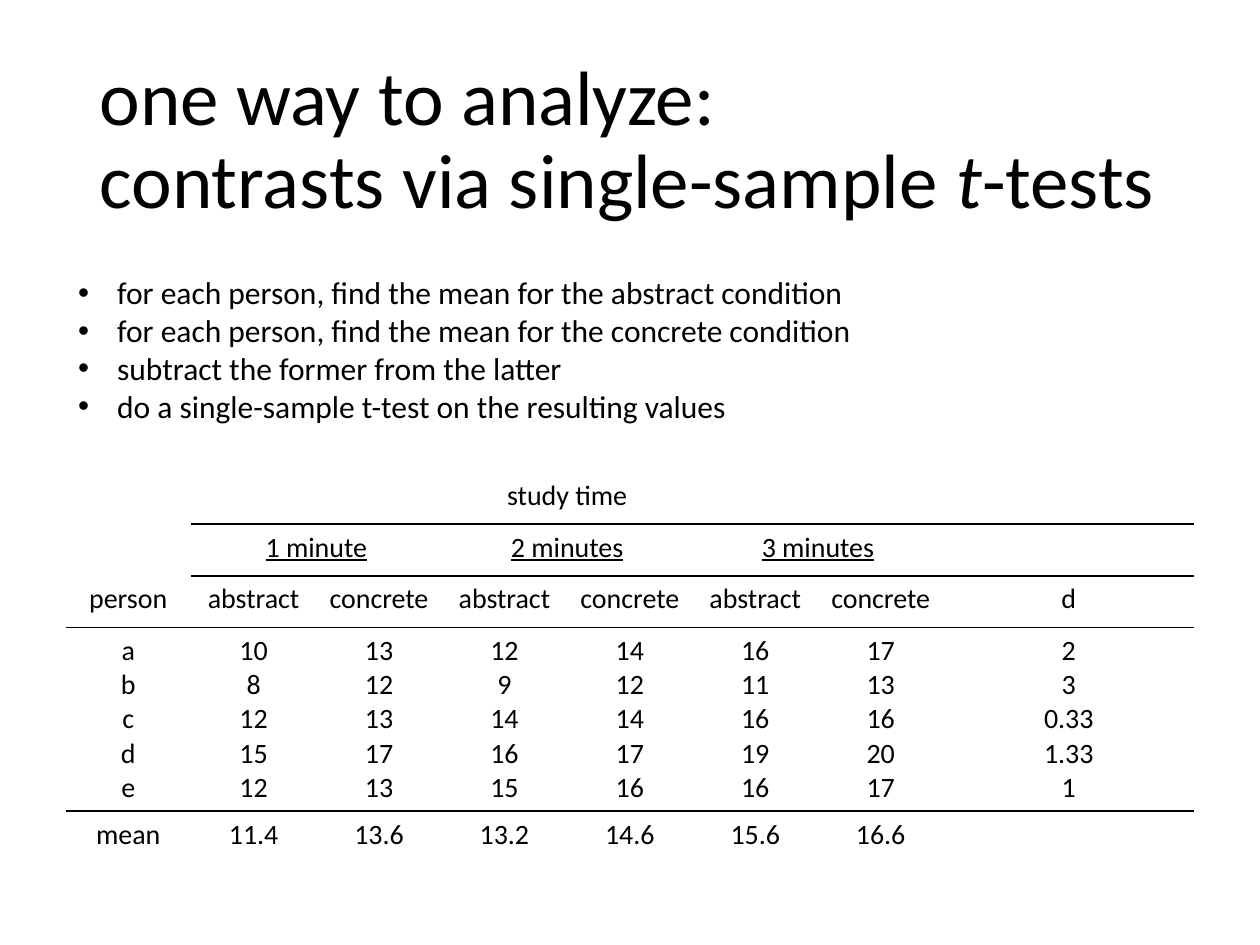
import pptx
import pptx.dml.color
import pptx.enum.text
import pptx.util
from pptx.oxml import parse_xml
from pptx.oxml.ns import nsdecls
from pptx.util import Inches

BLACK = pptx.dml.color.RGBColor(0x00, 0x00, 0x00)
FONT = "Calibri"
NO_STYLE_NO_GRID = "{2D5ABB26-0587-4C30-8999-92F81FD0307C}"
ALIGN = pptx.enum.text.PP_ALIGN

STEPS = [
    "for each person, find the mean for the abstract condition",
    "for each person, find the mean for the concrete condition",
    "subtract the former from the latter",
    "do a single-sample t-test on the resulting values",
]
STUDY_TIMES = ["1 minute", "2 minutes", "3 minutes"]
HEADINGS = ["person"] + ["abstract", "concrete"] * len(STUDY_TIMES) + ["d"]
SCORES = [
    ["a", "10", "13", "12", "14", "16", "17", "2"],
    ["b", "8", "12", "9", "12", "11", "13", "3"],
    ["c", "12", "13", "14", "14", "16", "16", "0.33"],
    ["d", "15", "17", "16", "17", "19", "20", "1.33"],
    ["e", "12", "13", "15", "16", "16", "17", "1"],
]
MEANS = ["mean", "11.4", "13.6", "13.2", "14.6", "15.6", "16.6"]
COLUMNS = 9
ROW_HEIGHTS = [0.41, 0.41, 0.41, 1.45, 0.38]


def add_run(p, text, size, italic=False, underline=False):
    r = p.add_run()
    r.text = text
    r.font.name = FONT
    r.font.size = pptx.util.Pt(size)
    r.font.color.rgb = BLACK
    r.font.italic = italic
    r.font.underline = underline


def place(sp, box):
    """Move a placeholder to box and stop it from resizing its text."""
    sp.left, sp.top, sp.width, sp.height = box
    sp.text_frame.auto_size = pptx.enum.text.MSO_AUTO_SIZE.NONE
    sp.text_frame.word_wrap = True


def fill_title(sp, box):
    place(sp, box)
    sp.text_frame.vertical_anchor = pptx.enum.text.MSO_ANCHOR.MIDDLE
    p = sp.text_frame.paragraphs[0]
    p.alignment = ALIGN.LEFT
    p.line_spacing = 0.9
    add_run(p, "one way to analyze:", 44)
    p.add_line_break()
    add_run(p, "contrasts via single-sample ", 44)
    add_run(p, "t", 44, italic=True)
    add_run(p, "-tests", 44)


def fill_steps(sp, box):
    place(sp, box)
    tf = sp.text_frame
    for i, step in enumerate(STEPS):
        p = tf.add_paragraph() if i else tf.paragraphs[0]
        p.space_before = pptx.util.Pt(0)
        pPr = p._p.get_or_add_pPr()
        pPr.set("marL", str(Inches(0.31)))
        pPr.set("indent", str(-Inches(0.31)))
        add_run(p, step, 18)


def write_cell(cell, lines, underline=False):
    for i, line in enumerate(lines):
        tf = cell.text_frame
        p = tf.add_paragraph() if i else tf.paragraphs[0]
        p.alignment = ALIGN.CENTER
        add_run(p, line, 16, underline=underline)


def rule_cell(cell, side):
    """Draw a 1 pt line on one side of a cell: "T" or "B"."""
    line = parse_xml(
        f'<a:ln{side} {nsdecls("a")} w="12700"><a:solidFill>'
        f'<a:srgbClr val="{BLACK}"/></a:solidFill></a:ln{side}>')
    tcPr = cell._tc.get_or_add_tcPr()
    tcPr.insert(sum(child.tag.endswith("lnT") for child in tcPr), line)


def add_scores_table(s, box):
    frame = s.shapes.add_table(len(ROW_HEIGHTS), COLUMNS, *box)
    table = frame.table
    table.first_row = table.horz_banding = False
    table._tbl.tblPr[0].text = NO_STYLE_NO_GRID
    for row, height in zip(table.rows, ROW_HEIGHTS):
        row.height = Inches(height)
    for column in table.columns:
        column.width = box[2] // COLUMNS

    table.cell(0, 1).merge(table.cell(0, 6))
    write_cell(table.cell(0, 1), ["study time"])
    for i, time in enumerate(STUDY_TIMES):
        left = 1 + 2 * i
        table.cell(1, left).merge(table.cell(1, left + 1))
        write_cell(table.cell(1, left), [time], underline=True)
    for row in (2, 3):
        table.cell(row, 7).merge(table.cell(row, 8))
    for col, heading in enumerate(HEADINGS):
        write_cell(table.cell(2, col), [heading])
    for col, scores in enumerate(zip(*SCORES)):
        write_cell(table.cell(3, col), scores)
    for col, mean in enumerate(MEANS):
        write_cell(table.cell(4, col), [mean])

    for row, first_col in ((0, 1), (2, 0), (3, 0)):
        for col in range(first_col, COLUMNS):
            rule_cell(table.cell(row, col), "B")
            rule_cell(table.cell(row + 1, col), "T")
    for cell in table.iter_cells():
        cell.fill.background()


def main():
    prs = pptx.Presentation()
    prs.slide_width, prs.slide_height = Inches(10), Inches(7.5)
    s = prs.slides.add_slide(prs.slide_layouts[1])
    left, width = Inches(0.52), Inches(8.96)
    fill_title(s.shapes.title,
               (Inches(0.69), Inches(0.4), Inches(8.62), Inches(1.45)))
    fill_steps(s.placeholders[1], (left, Inches(2.12), width, Inches(1.31)))
    add_scores_table(s, (left, Inches(3.75), width, Inches(sum(ROW_HEIGHTS))))
    prs.save("out.pptx")


if __name__ == "__main__":
    main()
